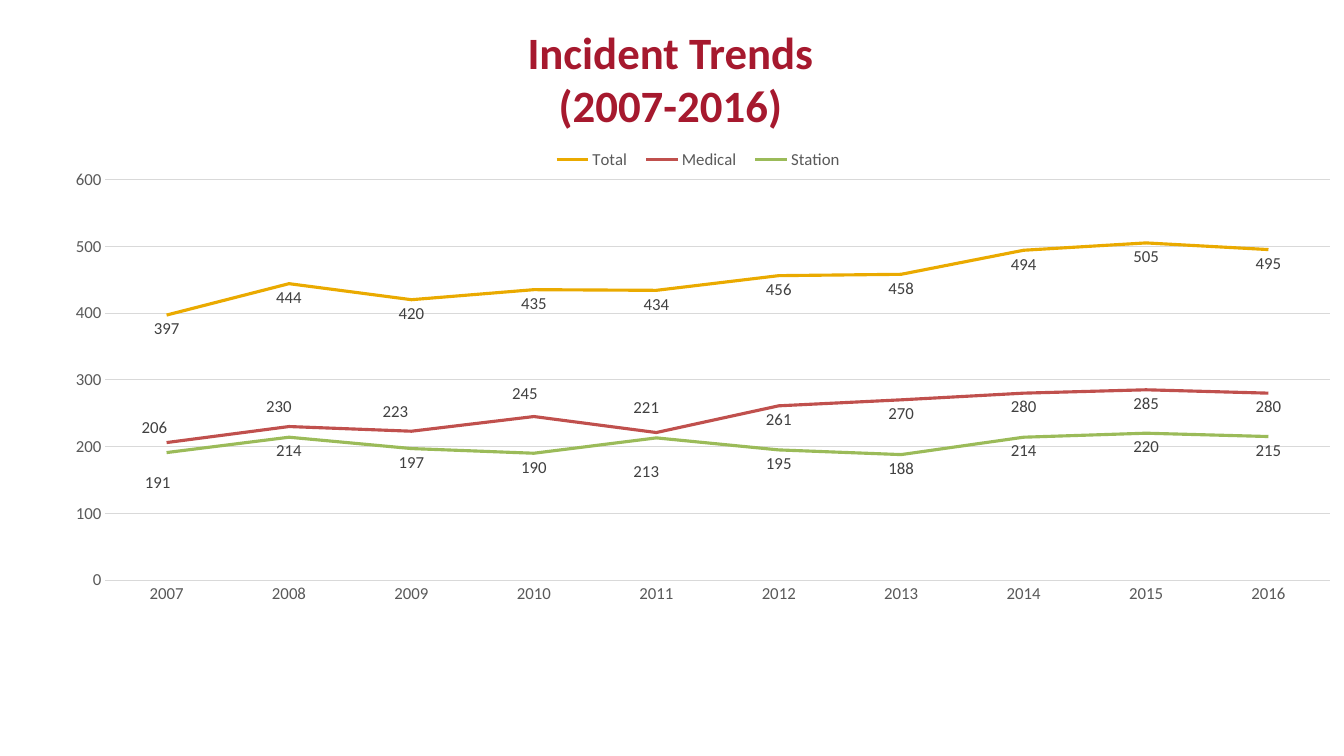
from lxml import etree
from pptx import Presentation
from pptx import util as u
from pptx.chart.data import CategoryChartData
from pptx.dml.color import RGBColor
from pptx.enum import chart as charts, text
from pptx.oxml import parse_xml
from pptx.oxml.ns import nsdecls

COLORS = {
    "title": "A6192E", "axis": "595959", "grid": "D9D9D9", "label": "404040",
    "Total": "EAAA00", "Medical": "C0504D", "Station": "9BBB59",
}
YEARS = [str(year) for year in range(2007, 2017)]
INCIDENTS = {
    "Total": [397, 444, 420, 435, 434, 456, 458, 494, 505, 495],
    "Medical": [206, 230, 223, 245, 221, 261, 270, 280, 285, 280],
    "Station": [191, 214, 197, 190, 213, 195, 188, 214, 220, 215],
}
# Shift of single labels in inches, by series and point
LABEL_SHIFTS = {
    "Medical": {0: (-0.12, -0.29), 1: (-0.10, -0.34), 2: (-0.16, -0.33),
                3: (-0.09, -0.36), 4: (-0.10, -0.39)},
    "Station": {0: (-0.09, 0.16), 4: (-0.10, 0.20)},
}


def rgb(name):
    return RGBColor.from_string(COLORS[name])


def format_font(font, size, color, bold=False):
    font.name = "Calibri"
    font.size = u.Pt(size)
    font.bold = bold
    font.color.rgb = rgb(color)


def write_text(frame, lines, size, color, bold=False, align=text.PP_ALIGN.CENTER):
    frame.text = "\n".join(lines)
    for paragraph in frame.paragraphs:
        paragraph.alignment = align
        format_font(paragraph.runs[0].font, size, color, bold)


def set_layout(parent, position, **settings):
    """Give a chart part a manual layout; settings follow the schema order."""
    for previous in parent.xpath("c:layout"):
        parent.remove(previous)
    layout = parse_xml(f"<c:layout {nsdecls('c')}><c:manualLayout/></c:layout>")
    namespace = etree.QName(layout).namespace
    for tag, value in settings.items():
        etree.SubElement(layout[0], f"{{{namespace}}}{tag}").set("val", str(value))
    parent.insert(position, layout)


class SlideBuilder:
    def __init__(self, presentation):
        self.slide = presentation.slides.add_slide(presentation.slide_layouts[5])

    def title(self, lines, left, top, width, height):
        title = self.slide.shapes.title
        title.left, title.top = u.Inches(left), u.Inches(top)
        title.width, title.height = u.Inches(width), u.Inches(height)
        frame = title.text_frame
        write_text(frame, lines, size=32, color="title", bold=True)
        frame.word_wrap = True
        frame.vertical_anchor = text.MSO_ANCHOR.TOP
        frame.auto_size = text.MSO_AUTO_SIZE.SHAPE_TO_FIT_TEXT
        # Keep the title in front of the chart
        title.element.getparent().append(title.element)

    def line_chart(self, categories, values, left, top, width, height):
        data = CategoryChartData()
        data.categories = categories
        for name, numbers in values.items():
            data.add_series(name, numbers)
        chart = self.slide.shapes.add_chart(
            charts.XL_CHART_TYPE.LINE, u.Inches(left), u.Inches(top),
            u.Inches(width), u.Inches(height), data).chart
        chart.has_title = False
        format_font(chart.font, 12, "axis")
        self.format_legend(chart)
        self.format_axes(chart)
        chart.plots[0].vary_by_categories = False
        for series, element in zip(chart.plots[0].series, chart.element.xpath(".//c:ser")):
            self.format_series(series)
            for index, (x, y) in LABEL_SHIFTS.get(series.name, {}).items():
                label = series.points[index].data_label
                format_font(label.font, 12, "label")
                label.position = charts.XL_LABEL_POSITION.BELOW
                set_layout(element.xpath(f"c:dLbls/c:dLbl[c:idx/@val='{index}']")[0], 1,
                           x=round(x / width, 4), y=round(y / height, 4))
        for leader_lines in chart.element.xpath(".//c:showLeaderLines"):
            leader_lines.set("val", "0")
        set_layout(chart.element.xpath(".//c:plotArea")[0], 0,
                   layoutTarget="inner", xMode="edge", yMode="edge",
                   x=0.041, y=0.145, w=0.948, h=0.778)

    def format_legend(self, chart):
        chart.has_legend = True
        chart.legend.position = charts.XL_LEGEND_POSITION.TOP
        chart.legend.include_in_layout = False
        format_font(chart.legend.font, 12, "axis")
        set_layout(chart.element.xpath(".//c:legend")[0], 1, xMode="edge", yMode="edge",
                   x=0.38, y=0.082, w=0.24, h=0.05)

    def format_axes(self, chart):
        for axis in (chart.category_axis, chart.value_axis):
            axis.major_tick_mark = axis.minor_tick_mark = charts.XL_TICK_MARK.NONE
            format_font(axis.tick_labels.font, 12, "axis")
        value_axis = chart.value_axis
        value_axis.minimum_scale, value_axis.maximum_scale = 0, 600
        value_axis.major_unit = 100
        value_axis.has_major_gridlines = True
        value_axis.format.line.fill.background()
        for line in (chart.category_axis.format.line, value_axis.major_gridlines.format.line):
            line.color.rgb = rgb("grid")
            line.width = u.Pt(0.75)

    def format_series(self, series):
        series.smooth = False
        series.marker.style = charts.XL_MARKER_STYLE.NONE
        series.format.line.color.rgb = rgb(series.name)
        series.format.line.width = u.Pt(2.25)
        labels = series.data_labels
        labels.show_value = True
        labels.position = charts.XL_LABEL_POSITION.BELOW
        format_font(labels.font, 12, "label")


def main():
    presentation = Presentation()
    presentation.slide_width = u.Inches(13.33)
    presentation.slide_height = u.Inches(7.5)
    builder = SlideBuilder(presentation)
    builder.line_chart(YEARS, INCIDENTS, 0.52, 1.04, 12.81, 5.11)
    builder.title(["Incident Trends", "(2007-2016)"], 3.63, 0.19, 6.04, 1.18)
    presentation.save("out.pptx")


if __name__ == "__main__":
    main()
